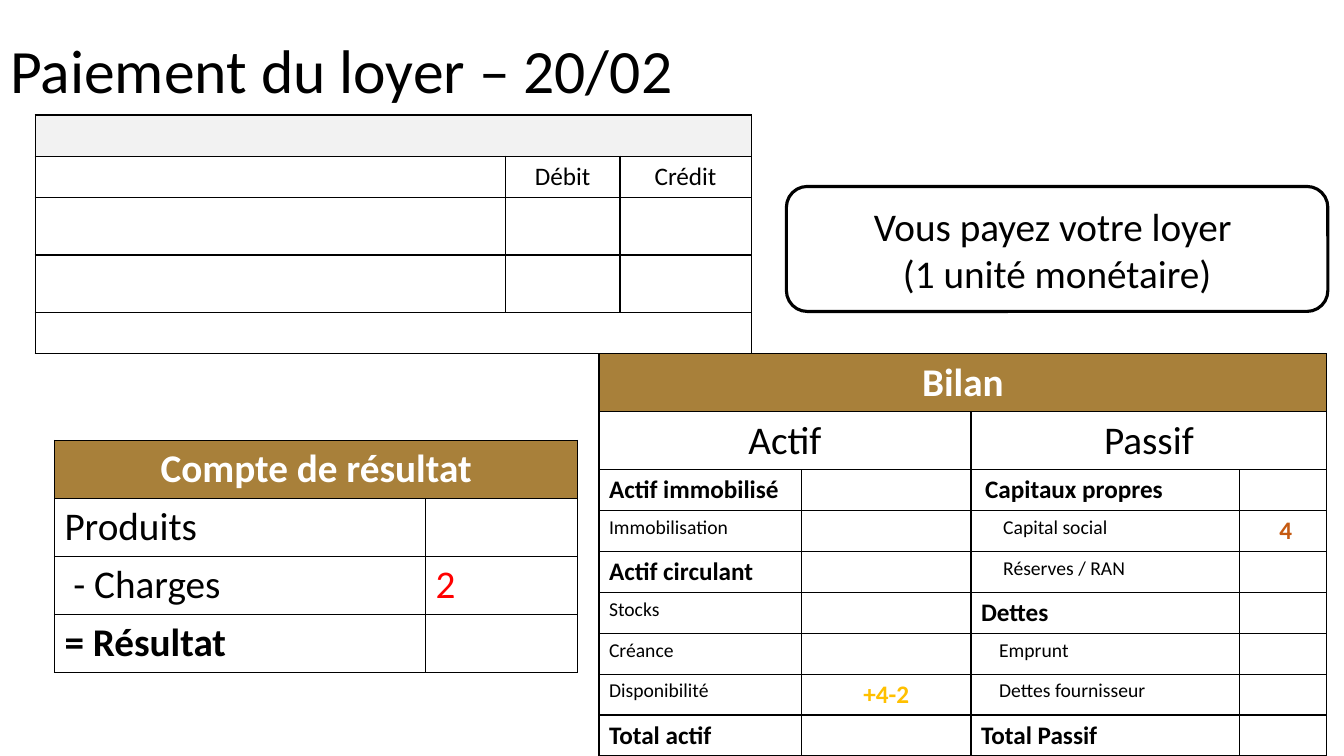
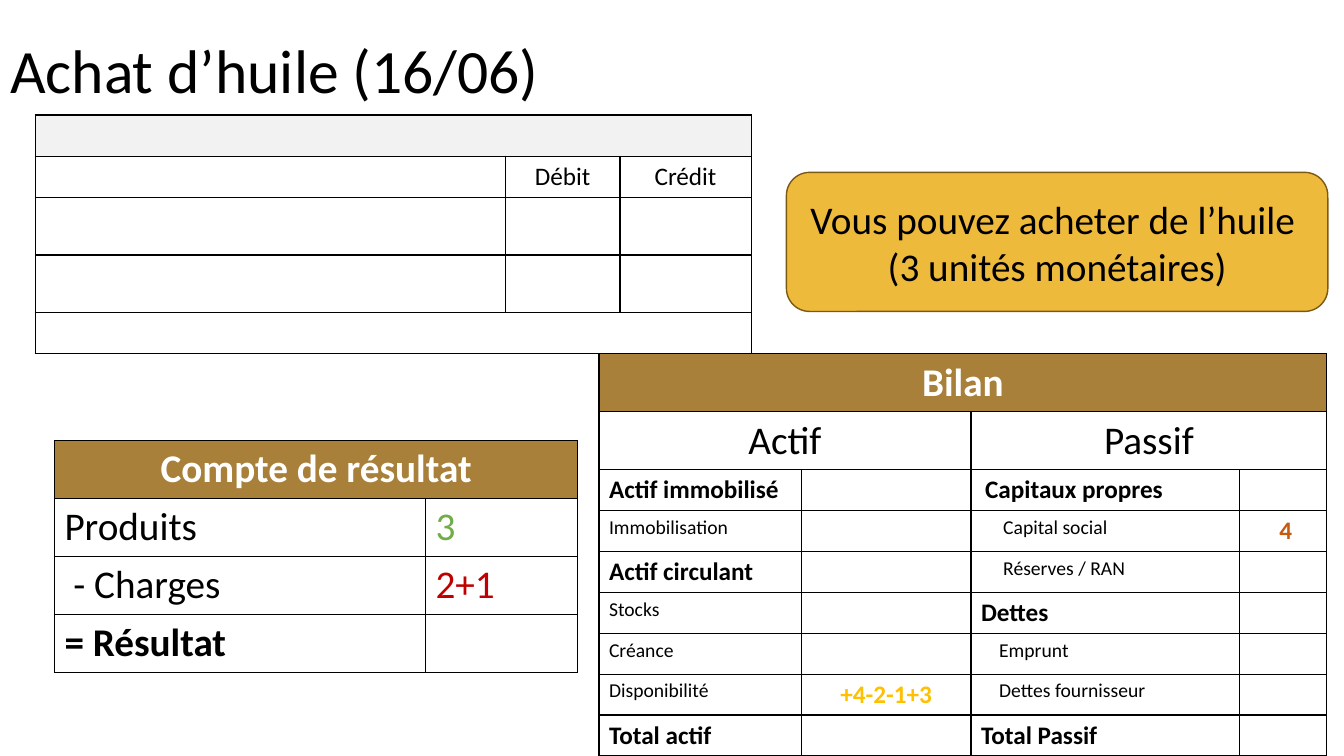
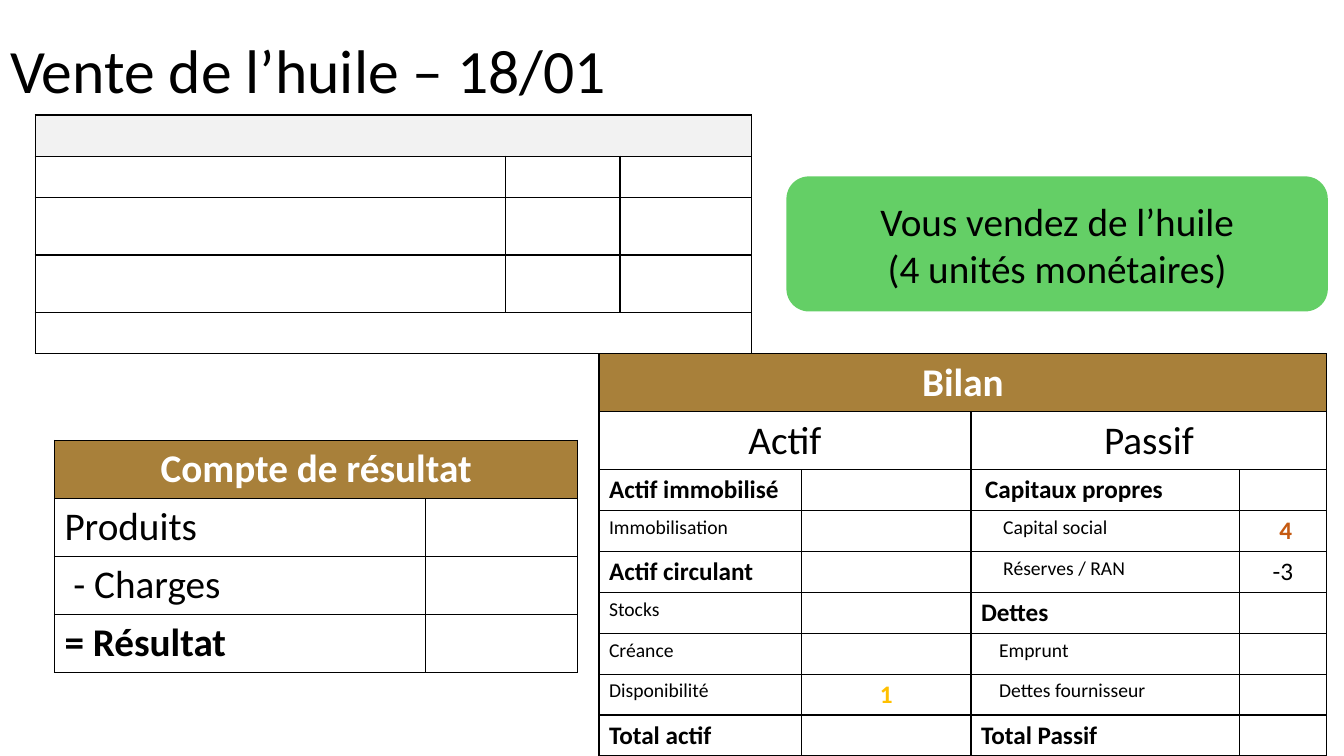
"""Build three accounting exercise slides with a journal, an income statement and a balance sheet."""
from dataclasses import dataclass, replace
from typing import Optional

from lxml.etree import SubElement
from pptx import Presentation
from pptx.dml.color import RGBColor
from pptx.enum.shapes import MSO_SHAPE
from pptx.enum.text import MSO_ANCHOR, MSO_AUTO_SIZE, PP_ALIGN
from pptx.oxml import parse_xml
from pptx.oxml.ns import nsdecls, qn
from pptx.util import Pt

PX = 9144
FONT = "Calibri"
BLACK = RGBColor(0x00, 0x00, 0x00)
WHITE = RGBColor(0xFF, 0xFF, 0xFF)
PALE_GREY = RGBColor(0xF2, 0xF2, 0xF2)
BRONZE = RGBColor(0xA8, 0x80, 0x3A)
GOLD = RGBColor(0xEE, 0xBA, 0x3C)
DARK_GOLD = RGBColor(0x7B, 0x59, 0x13)
SALE_GREEN = RGBColor(0x64, 0xCF, 0x66)
INCOME_GREEN = RGBColor(0x70, 0xAD, 0x47)
RED = RGBColor(0xFF, 0x00, 0x00)
DARK_RED = RGBColor(0xC0, 0x00, 0x00)
RUST = RGBColor(0xC5, 0x5A, 0x11)
AMBER = RGBColor(0xFF, 0xC0, 0x00)


@dataclass(frozen=True)
class Style:
    """Look of the text in a cell or a box."""
    size: int
    bold: bool = False
    colour: RGBColor = BLACK
    align: PP_ALIGN = PP_ALIGN.LEFT
    indent: int = 0


@dataclass(frozen=True)
class Cell:
    """Text, style, width in columns and fill of a table cell."""
    text: str = ""
    style: Optional[Style] = None
    span: int = 1
    fill: Optional[RGBColor] = None


@dataclass(frozen=True)
class Operation:
    """Content that changes from one slide to the next."""
    title: str
    message: str
    callout_top: int
    cash: str
    callout_fill: Optional[RGBColor] = None
    callout_line: Optional[RGBColor] = None
    line_width: float = 1
    headings: tuple = ("Débit", "Crédit")
    income: Cell = Cell()
    charges: Cell = Cell()
    reserves: Cell = Cell()


LARGE = Style(28)
LARGE_BOLD = replace(LARGE, bold=True)
LARGE_CENTRED = replace(LARGE, align=PP_ALIGN.CENTER)
BANNER = Style(28, True, WHITE, PP_ALIGN.CENTER)
SECTION = Style(18, True)
CENTRED = Style(18, align=PP_ALIGN.CENTER)
ITEM = Style(14)
DEBT_ITEM = replace(ITEM, indent=18)
EQUITY_ITEM = replace(ITEM, indent=22)
EMPTY = Cell()

OPERATIONS = [
    Operation("Paiement du loyer – 20/02", "Vous payez votre loyer \n(1 unité monétaire)", 185, "+4-2",
              callout_line=BLACK, line_width=2.25,
              charges=Cell("2", replace(LARGE, colour=RED))),
    Operation("Achat d’huile (16/06)", "Vous pouvez acheter de l’huile \n(3 unités monétaires)", 171,
              "+4-2-1+3", callout_fill=GOLD, callout_line=DARK_GOLD,
              income=Cell("3", replace(LARGE, colour=INCOME_GREEN)),
              charges=Cell("2+1", replace(LARGE, colour=DARK_RED))),
    Operation("Vente de l’huile – 18/01", "Vous vendez de l’huile\n(4 unités monétaires)", 175, "1",
              callout_fill=SALE_GREEN, headings=("", ""), reserves=Cell("-3", CENTRED)),
]


def style_text(frame, style):
    """Apply one style to every paragraph of a text frame."""
    for paragraph in frame.paragraphs:
        paragraph.alignment = style.align
        if style.indent:
            paragraph._p.get_or_add_pPr().set("marL", str(style.indent * PX))
        for span in paragraph.runs:
            span.font.name = FONT
            span.font.size = Pt(style.size)
            span.font.bold = style.bold
            span.font.color.rgb = style.colour


def paint(fill, colour):
    """Fill with a colour, or leave transparent when there is none."""
    if colour is None:
        fill.background()
    else:
        fill.solid()
        fill.fore_color.rgb = colour


def add_borders(cell):
    """Draw a thin black line on the four sides of a cell."""
    properties = cell._tc.get_or_add_tcPr()
    for position, side in enumerate(("lnL", "lnR", "lnT", "lnB")):
        line = parse_xml(f'<a:{side} {nsdecls("a")} w="{Pt(1)}"/>')
        solid = SubElement(line, qn("a:solidFill"))
        SubElement(solid, qn("a:srgbClr"), val=str(BLACK))
        properties.insert(position, line)


def add_grid(page, left, top, widths, heights, rows):
    """Add a bordered table whose rows hold Cell values."""
    frame = page.shapes.add_table(len(heights), len(widths), left * PX, top * PX,
                                  sum(widths) * PX, sum(heights) * PX)
    table = frame.table
    table.first_row = table.horz_banding = False
    for column, width in zip(table.columns, widths):
        column.width = width * PX
    for row, height in zip(table.rows, heights):
        row.height = height * PX
    for cell in table.iter_cells():
        paint(cell.fill, None)
        add_borders(cell)
    for row_index, row in enumerate(rows):
        column_index = 0
        for content in row:
            cell = table.cell(row_index, column_index)
            if content.span > 1:
                cell.merge(table.cell(row_index, column_index + content.span - 1))
            paint(cell.fill, content.fill)
            if content.text:
                cell.text_frame.text = content.text
                style_text(cell.text_frame, content.style)
            column_index += content.span


def add_journal(page, operation):
    """Add the journal entry table."""
    headings = [Cell(text, CENTRED) for text in operation.headings]
    blank = [EMPTY] * 3
    add_grid(page, 35, 114, [466, 114, 130], [41, 41, 57, 57, 41],
             [[Cell(span=3, fill=PALE_GREY)], [EMPTY, *headings], blank, blank, [Cell(span=3)]])


def add_income_statement(page, operation):
    """Add the income statement table."""
    add_grid(page, 54, 437, [368, 151], [57] * 4, [
        [Cell("Compte de résultat", BANNER, 2, BRONZE)],
        [Cell("Produits", LARGE), operation.income],
        [Cell(" - Charges", LARGE), operation.charges],
        [Cell("= Résultat", LARGE_BOLD), EMPTY],
    ])


def add_balance_sheet(page, operation):
    """Add the balance sheet table."""
    cash = Cell(operation.cash, replace(CENTRED, bold=True, colour=AMBER))
    capital = Cell(" 4", replace(CENTRED, bold=True, colour=RUST))
    add_grid(page, 594, 351, [201, 168, 266, 87], [57] * 2 + [40] * 7, [
        [Cell("Bilan", BANNER, 4, BRONZE)],
        [Cell("Actif", LARGE_CENTRED, 2), Cell("Passif", LARGE_CENTRED, 2)],
        [Cell("Actif immobilisé", SECTION), EMPTY,
         Cell("Capitaux propres", replace(SECTION, indent=4)), EMPTY],
        [Cell("Immobilisation", ITEM), EMPTY, Cell("Capital social", EQUITY_ITEM), capital],
        [Cell("Actif circulant", SECTION), EMPTY,
         Cell("Réserves / RAN", EQUITY_ITEM), operation.reserves],
        [Cell("Stocks", ITEM), EMPTY, Cell("Dettes", SECTION), EMPTY],
        [Cell("Créance", ITEM), EMPTY, Cell("Emprunt", DEBT_ITEM), EMPTY],
        [Cell("Disponibilité", ITEM), cash, Cell("Dettes fournisseur", DEBT_ITEM), EMPTY],
        [Cell("Total actif", SECTION), EMPTY, Cell("Total Passif", SECTION), EMPTY],
    ])


def add_callout(page, operation):
    """Add the rounded box that states the operation."""
    top, bottom = operation.callout_top, 309
    box = page.shapes.add_shape(MSO_SHAPE.ROUNDED_RECTANGLE, 780 * PX, top * PX,
                                537 * PX, (bottom - top) * PX)
    box.shadow.inherit = False
    paint(box.fill, operation.callout_fill)
    paint(box.line.fill, operation.callout_line)
    if operation.callout_line is not None:
        box.line.width = Pt(operation.line_width)
    frame = box.text_frame
    frame.text = operation.message
    frame.word_wrap = True
    frame.vertical_anchor = MSO_ANCHOR.MIDDLE
    style_text(frame, LARGE_CENTRED)


def add_title(page, text):
    """Fill the title placeholder."""
    title = page.shapes.title
    title.left, title.top, title.width, title.height = 0, 0, 1150 * PX, 145 * PX
    frame = title.text_frame
    frame.text = text
    frame.auto_size = MSO_AUTO_SIZE.NONE
    frame.vertical_anchor = MSO_ANCHOR.MIDDLE
    frame.paragraphs[0].line_spacing = 0.9
    style_text(frame, Style(44))


def main():
    """Build and save the deck."""
    deck = Presentation()
    deck.slide_width, deck.slide_height = 1333 * PX, 750 * PX
    for operation in OPERATIONS:
        page = deck.slides.add_slide(deck.slide_layouts[5])
        add_title(page, operation.title)
        add_journal(page, operation)
        add_income_statement(page, operation)
        add_balance_sheet(page, operation)
        add_callout(page, operation)
    deck.save("out.pptx")


if __name__ == "__main__":
    main()
